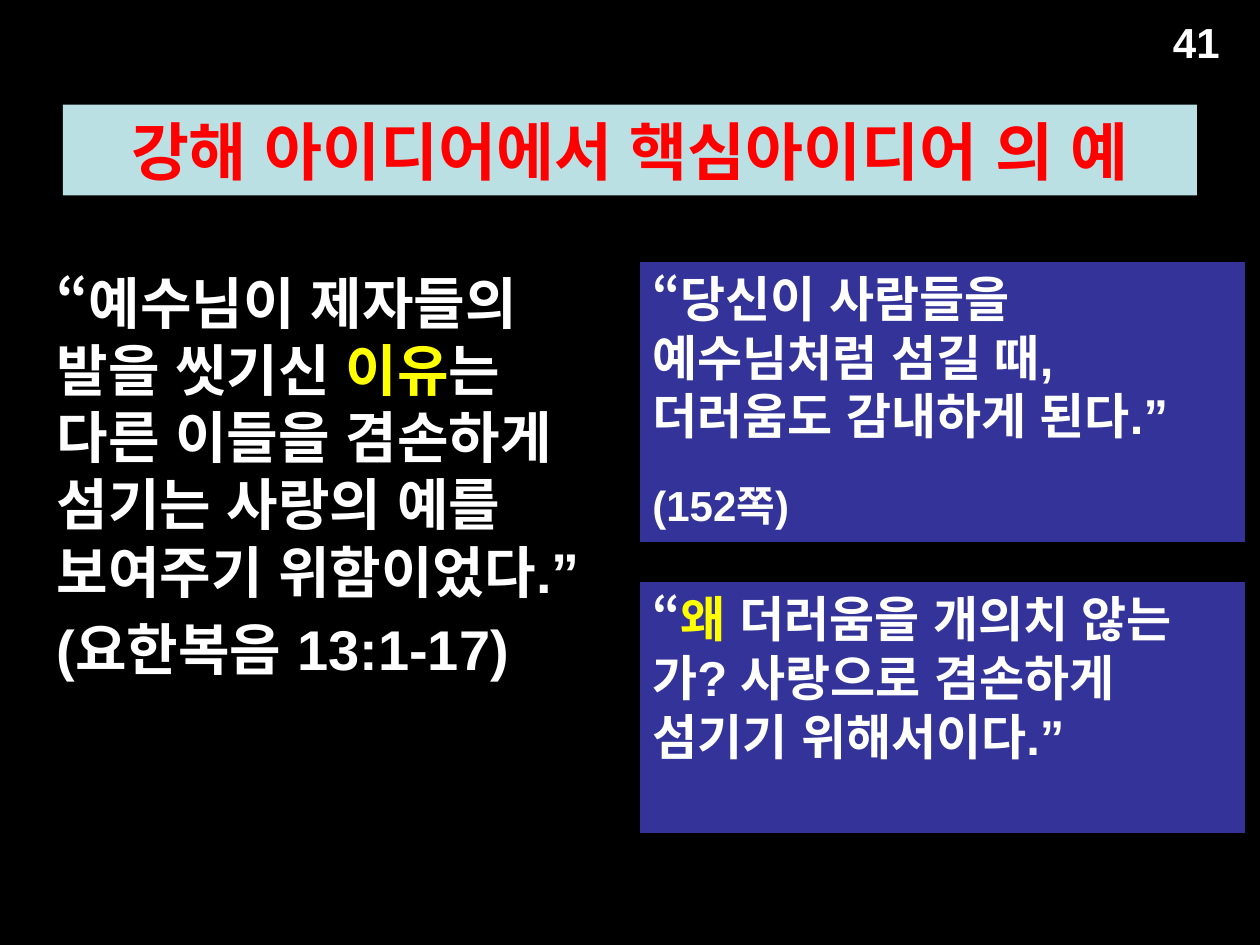
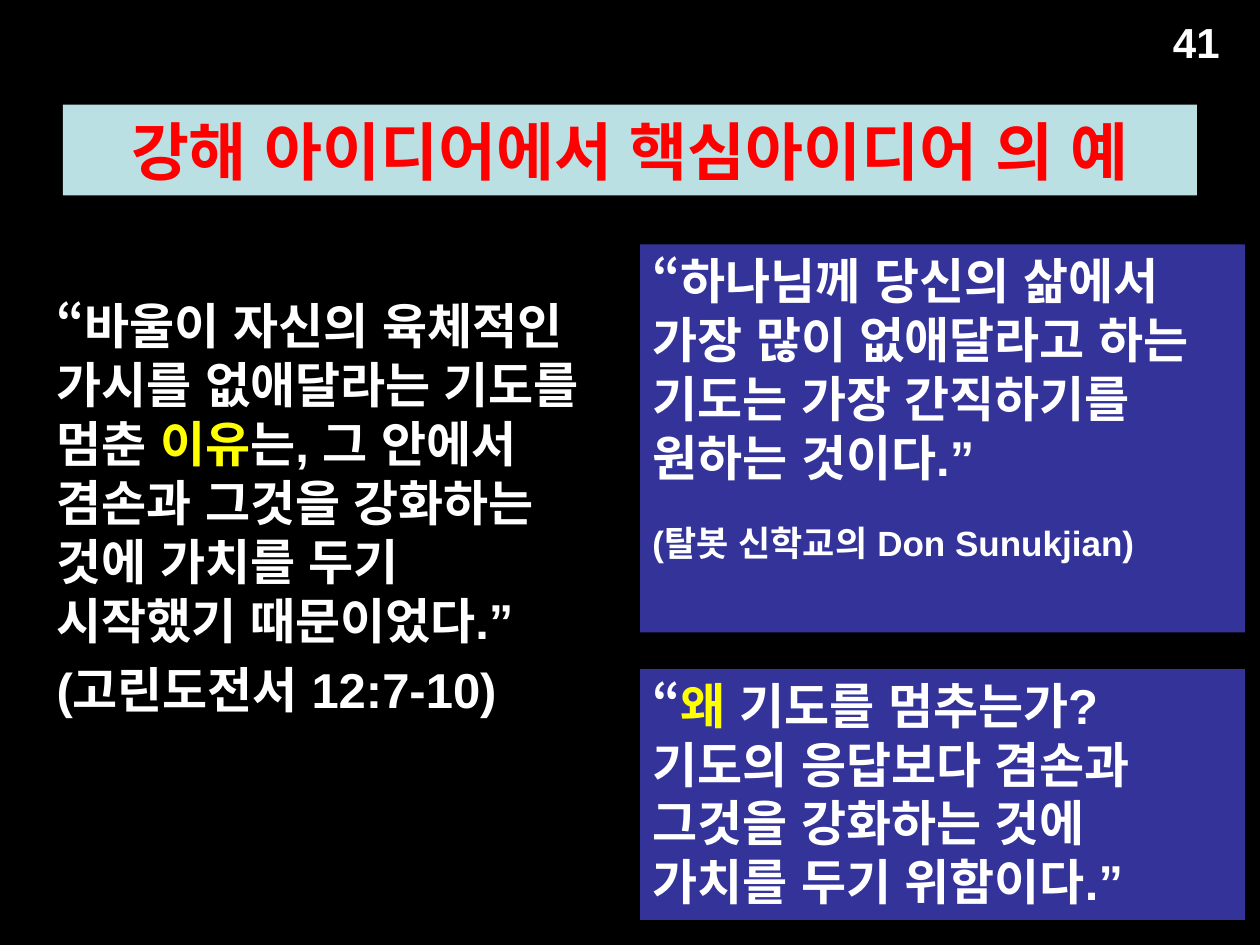
"""Builds two slides that turn an exegetical idea into a central idea."""
from dataclasses import dataclass

from pptx import Presentation
from pptx import util as u
from pptx.dml.color import RGBColor
from pptx.enum import lang, shapes, text


@dataclass(frozen=True)
class Theme:
    """Colours, font and type sizes shared by the slides."""
    font: str = "Arial"
    background: str = "000000"
    band: str = "BBE0E3"
    panel: str = "333399"
    title: str = "FF0000"
    body: str = "FFFFFF"
    accent: str = "FFFF00"
    title_size: int = 36
    number_size: int = 24
    panel_size: int = 28
    source_gap: int = 20


class SlideBuilder:
    """Holds the theme and the current slide, and draws each kind of element."""

    def __init__(self, deck, theme):
        self.deck = deck
        self.theme = theme
        self.page = None

    def add_page(self):
        """Start a blank slide on the dark background."""
        self.page = self.deck.slides.add_slide(self.deck.slide_layouts[6])
        fill = self.page.background.fill
        fill.solid()
        fill.fore_color.rgb = RGBColor.from_string(self.theme.background)

    def add_words(self, para, words, size, color):
        """Fill a paragraph, accenting the words between asterisks."""
        for index, part in enumerate(words.split("*")):
            span = para.add_run()
            span.text = part
            span.font.name = self.theme.font
            span.font.size = u.Pt(size)
            span.font.bold = True
            span.font.language_id = lang.MSO_LANGUAGE_ID.KOREAN
            shade = self.theme.accent if index % 2 else color
            span.font.color.rgb = RGBColor.from_string(shade)

    def block(self, place, fill):
        """Draw a plain filled rectangle and return its text frame."""
        box = self.page.shapes.add_shape(
            shapes.MSO_SHAPE.RECTANGLE, *map(u.Inches, place))
        box.shadow.inherit = False
        box.fill.solid()
        box.fill.fore_color.rgb = RGBColor.from_string(fill)
        box.line.fill.background()
        box.text_frame.word_wrap = True
        return box.text_frame

    def number(self, words):
        """Put the page number in the top right corner."""
        box = self.page.shapes.add_textbox(
            *map(u.Inches, (9.08, 0.08, 0.83, 0.5)))
        box.text_frame.word_wrap = True
        para = box.text_frame.paragraphs[0]
        para.alignment = text.PP_ALIGN.CENTER
        self.add_words(para, words, self.theme.number_size, self.theme.body)

    def title(self, words):
        """Draw the title band."""
        frame = self.block((0.5, 0.83, 9, 0.72), self.theme.band)
        frame.vertical_anchor = text.MSO_ANCHOR.MIDDLE
        para = frame.paragraphs[0]
        para.alignment = text.PP_ALIGN.CENTER
        self.add_words(para, words, self.theme.title_size, self.theme.title)

    def quote(self, place, fill, words, size, source="", source_size=0, gap=0):
        """Draw a quotation with an optional source line below it."""
        frame = self.block(place, fill)
        frame.vertical_anchor = text.MSO_ANCHOR.TOP
        para = frame.paragraphs[0]
        para.alignment = text.PP_ALIGN.LEFT
        self.add_words(para, words, size, self.theme.body)
        if source:
            para = frame.add_paragraph()
            para.alignment = text.PP_ALIGN.LEFT
            para.space_before = u.Pt(gap)
            self.add_words(para, source, source_size, self.theme.body)

    def passage(self, top, height, words, size, source):
        """Put the exegetical idea in the left column."""
        self.quote((0.35, top, 4.41, height), self.theme.background,
                   words, size, source, size, gap=round(size * 0.2))

    def panel(self, top, height, words, source="", source_size=0):
        """Put a central idea in a blue panel of the right column."""
        self.quote((5.08, top, 4.8, height), self.theme.panel, words,
                   self.theme.panel_size, source, source_size,
                   self.theme.source_gap)


EXAMPLES = [
    {
        "passage": (2.08, 4.52,
                    "“예수님이 제자들의 발을 씻기신 *이유*는 다른 이들을 겸손하게 "
                    "섬기는 사랑의 예를 보여주기 위함이었다.”",
                    32, "(요한복음 13:1-17)"),
        "panels": [
            (2.08, 2.22,
             "“당신이 사람들을 예수님처럼 섬길 때, 더러움도 감내하게 된다.”",
             "(152쪽)", 24),
            (4.62, 1.99,
             "“*왜* 더러움을 개의치 않는가? 사랑으로 겸손하게 섬기기 위해서이다.”"),
        ],
    },
    {
        "passage": (2.3, 3.97,
                    "“바울이 자신의 육체적인 가시를 없애달라는 기도를 멈춘 *이유*는, "
                    "그 안에서 겸손과 그것을 강화하는 것에 가치를 두기 "
                    "시작했기 때문이었다.”",
                    28, "(고린도전서 12:7-10)"),
        "panels": [
            (1.94, 3.08,
             "“하나님께 당신의 삶에서 가장 많이 없애달라고 하는 기도는 "
             "가장 간직하기를 원하는 것이다.”",
             "(탈봇 신학교의 Don Sunukjian)", 20),
            (5.31, 1.99,
             "“*왜* 기도를 멈추는가? 기도의 응답보다 겸손과 그것을 강화하는 "
             "것에 가치를 두기 위함이다.”"),
        ],
    },
]


def main():
    """Build and save the deck."""
    deck = Presentation()
    deck.slide_width, deck.slide_height = u.Inches(10), u.Inches(7.5)
    builder = SlideBuilder(deck, Theme())
    for example in EXAMPLES:
        builder.add_page()
        builder.number("41")
        builder.title("강해 아이디어에서 핵심아이디어 의 예")
        builder.passage(*example["passage"])
        for panel in example["panels"]:
            builder.panel(*panel)
    deck.save("out.pptx")


if __name__ == "__main__":
    main()
